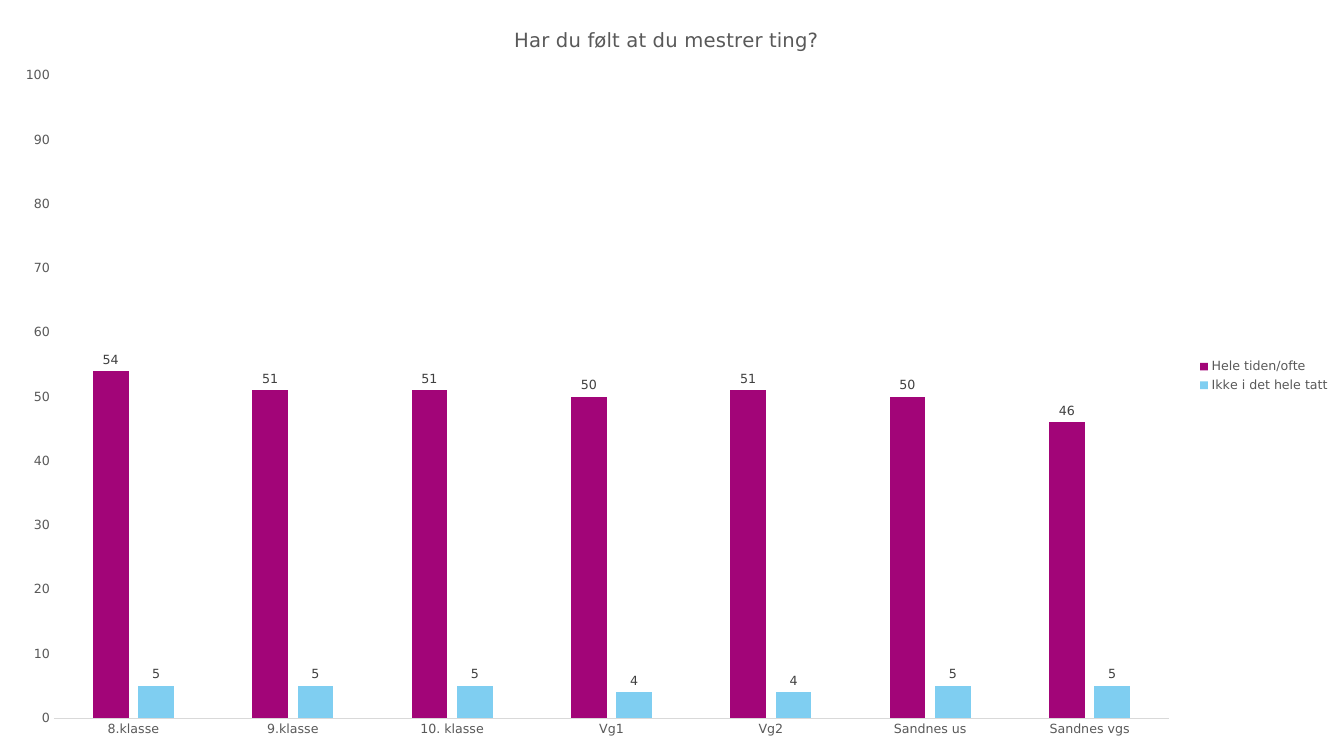
import pptx
import pptx.chart.data
import pptx.dml.color
import pptx.enum.chart
import pptx.oxml
import pptx.oxml.ns
import pptx.util

Pt = pptx.util.Pt
FACE = "DejaVu Sans"
GREY = "595959"
WIDTH, HEIGHT = Pt(960), Pt(540)

TITLE = "Har du følt at du mestrer ting?"
GRADES = ["8.klasse", "9.klasse", "10. klasse", "Vg1", "Vg2",
          "Sandnes us", "Sandnes vgs"]
SERIES = [
    ("Hele tiden/ofte", "A20578", [54, 51, 51, 50, 51, 50, 46]),
    ("Ikke i det hele tatt", "7FCEF1", [5, 5, 5, 4, 4, 5, 5]),
]


def color(code):
    return pptx.dml.color.RGBColor.from_string(code)


def style(font, size, code):
    font.name = FACE
    font.size = Pt(size)
    font.bold = False
    font.color.rgb = color(code)


def place(chart, part, inner=False, **spots):
    """Fix a chart part (title, plotArea, legend) at fractions of the chart."""
    node = chart._chartSpace.xpath(f"c:chart/c:{part}")[0]
    for old in node.xpath("c:layout"):
        node.remove(old)
    target = '<c:layoutTarget val="inner"/>' if inner else ""
    modes = "".join(f'<c:{key}Mode val="edge"/>' for key in spots if key in "xy")
    sizes = "".join(f'<c:{key} val="{val}"/>' for key, val in spots.items())
    layout = pptx.oxml.parse_xml(
        f'<c:layout {pptx.oxml.ns.nsdecls("c")}><c:manualLayout>'
        f"{target}{modes}{sizes}</c:manualLayout></c:layout>")
    after = node.xpath("c:overlay")
    if after:
        after[0].addprevious(layout)
    else:
        node.insert(0, layout)


def add_bars(slide):
    kinds = pptx.enum.chart
    data = pptx.chart.data.CategoryChartData()
    data.categories = GRADES
    for name, _, values in SERIES:
        data.add_series(name, values)
    chart = slide.shapes.add_chart(
        kinds.XL_CHART_TYPE.COLUMN_CLUSTERED, 0, 0, WIDTH, HEIGHT, data).chart
    style(chart.font, 10, "000000")

    plot = chart.plots[0]
    plot.gap_width = 219
    plot.overlap = -27
    plot.vary_by_categories = False
    for series, (_, code, _) in zip(plot.series, SERIES):
        series.format.fill.solid()
        series.format.fill.fore_color.rgb = color(code)
        labels = series.data_labels
        labels.show_value = True
        labels.position = kinds.XL_LABEL_POSITION.OUTSIDE_END
        style(labels.font, 9, "404040")
    return chart


def style_axes(chart):
    marks = pptx.enum.chart.XL_TICK_MARK
    grades, scale = chart.category_axis, chart.value_axis
    for axis in (grades, scale):
        axis.major_tick_mark = axis.minor_tick_mark = marks.NONE
        axis.has_major_gridlines = False
        style(axis.tick_labels.font, 9, GREY)
    grades.format.line.color.rgb = color("D9D9D9")
    grades.format.line.width = Pt(0.75)
    scale.format.line.fill.background()
    scale.minimum_scale = 0
    scale.maximum_scale = 100
    scale.major_unit = 10


def add_title(chart):
    chart.has_title = True
    frame = chart.chart_title.text_frame
    frame.text = TITLE
    style(frame.paragraphs[0].font, 14, GREY)
    place(chart, "title", x=0.38, y=0.03)


def add_legend(chart):
    chart.has_legend = True
    legend = chart.legend
    legend.position = pptx.enum.chart.XL_LEGEND_POSITION.RIGHT
    legend.include_in_layout = False
    style(legend.font, 9, GREY)
    place(chart, "legend", x=0.89, y=0.47)


def main():
    deck = pptx.Presentation()
    deck.slide_width, deck.slide_height = WIDTH, HEIGHT
    slide = deck.slides.add_slide(deck.slide_layouts[6])
    chart = add_bars(slide)
    style_axes(chart)
    add_title(chart)
    add_legend(chart)
    place(chart, "plotArea", inner=True, x=0.04, y=0.1, w=0.83, h=0.85)
    deck.save("out.pptx")


if __name__ == "__main__":
    main()
